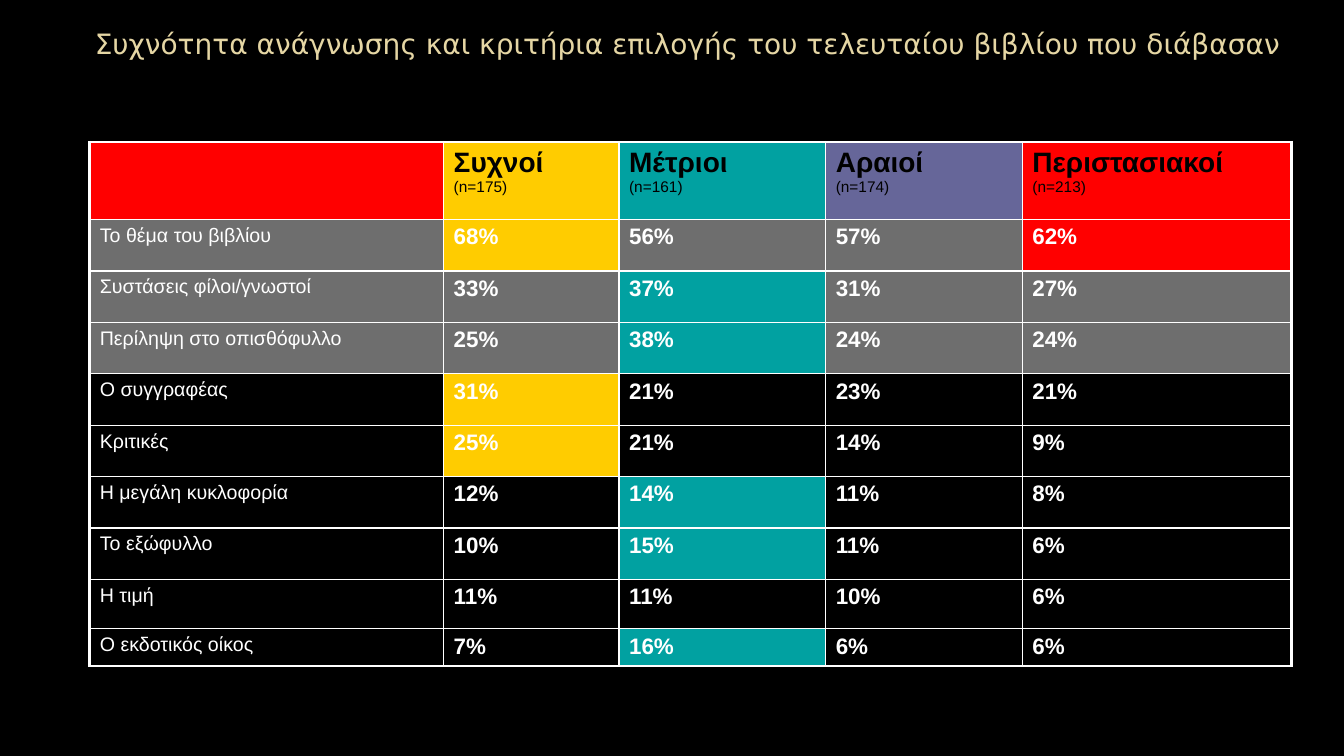
from pptx import Presentation
from pptx import util as u
from pptx.dml.color import RGBColor
from pptx.enum import text
from pptx.oxml import parse_xml
from pptx.oxml.ns import nsdecls
from lxml import etree

COLORS = {
    "black": "000000", "white": "FFFFFF", "cream": "E5D6A4", "red": "FF0000",
    "yellow": "FFCC00", "teal": "01A1A1", "violet": "666699", "grey": "DDDDDD",
}
READERS = [
    ("Συχνοί", "(n=175)", "yellow"),
    ("Μέτριοι", "(n=161)", "teal"),
    ("Αραιοί", "(n=174)", "violet"),
    ("Περιστασιακοί", "(n=213)", "red"),
]
CRITERIA = [
    ("Το θέμα του βιβλίου", (68, 56, 57, 62), (0, 3)),
    ("Συστάσεις φίλοι/γνωστοί", (33, 37, 31, 27), (1,)),
    ("Περίληψη στο οπισθόφυλλο", (25, 38, 24, 24), (1,)),
    ("Ο συγγραφέας", (31, 21, 23, 21), (0,)),
    ("Κριτικές", (25, 21, 14, 9), (0,)),
    ("Η μεγάλη κυκλοφορία", (12, 14, 11, 8), (1,)),
    ("Το εξώφυλλο", (10, 15, 11, 6), (1,)),
    ("Η τιμή", (11, 11, 10, 6), ()),
    ("Ο εκδοτικός οίκος", (7, 16, 6, 6), (1,)),
]
TOP_CRITERIA = 3
COLUMN_WIDTHS = [3.51, 1.74, 2.05, 1.95, 2.67]
ROW_HEIGHTS = [0.77] + [0.51] * 7 + [0.49, 0.37]


class Deck:
    def __init__(self):
        self.prs = Presentation()
        self.prs.slide_width, self.prs.slide_height = u.Inches(13.33), u.Inches(7.5)
        self.slide = self.prs.slides.add_slide(self.prs.slide_layouts[5])
        self.paint(self.slide.background.fill, "black")

    def paint(self, fill, color):
        fill.solid()
        fill.fore_color.rgb = RGBColor.from_string(COLORS[color])

    def style(self, paragraph, size, color, bold=False, face="Arial"):
        font = paragraph.font
        font.size, font.bold, font.name = u.Pt(size), bold, face
        font.color.rgb = RGBColor.from_string(COLORS[color])

    def title(self, wording, left, top, width, height):
        heading = self.slide.shapes.title
        heading.left, heading.top = u.Inches(left), u.Inches(top)
        heading.width, heading.height = u.Inches(width), u.Inches(height)
        frame = heading.text_frame
        frame.text = wording
        frame.word_wrap = True
        frame.auto_size = text.MSO_AUTO_SIZE.SHAPE_TO_FIT_TEXT
        frame.vertical_anchor = text.MSO_ANCHOR.MIDDLE
        paragraph = frame.paragraphs[0]
        paragraph.alignment = text.PP_ALIGN.LEFT
        paragraph.line_spacing = 1.1
        self.style(paragraph, 20, "cream", face="DejaVu Sans")

    def table(self, left, top, widths, heights):
        grid = self.slide.shapes.add_table(
            len(heights), len(widths), u.Inches(left), u.Inches(top),
            u.Inches(sum(widths)), u.Inches(sum(heights))).table
        grid.first_row = grid.horz_banding = False
        for column, width in zip(grid.columns, widths):
            column.width = u.Inches(width)
        for row, height in zip(grid.rows, heights):
            row.height = u.Inches(height)
        for r in range(len(heights)):
            for c in range(len(widths)):
                outer = {"L": c == 0, "R": c == len(widths) - 1,
                         "T": r == 0, "B": r == len(heights) - 1}
                self.borders(grid.cell(r, c), outer)
        return grid

    def borders(self, cell, outer):
        properties = cell._tc.get_or_add_tcPr()
        for side, is_outer in outer.items():
            properties.append(parse_xml(
                f'<a:ln{side} {nsdecls("a")} w="{u.Pt(2.25 if is_outer else 1)}">'
                f'<a:solidFill><a:srgbClr val="{COLORS["white"]}"/></a:solidFill>'
                f'</a:ln{side}>'))

    def cell(self, cell, lines, fill=None, alpha=None):
        if fill:
            self.paint(cell.fill, fill)
        else:
            cell.fill.background()
        if alpha:
            tint = cell._tc.tcPr.find("a:solidFill/a:srgbClr", cell._tc.nsmap)
            etree.SubElement(tint, f"{{{tint.nsmap['a']}}}alpha", val=str(alpha * 1000))
        cell.text = "\n".join(wording for wording, *_ in lines)
        for paragraph, (_, size, color, bold) in zip(cell.text_frame.paragraphs, lines):
            self.style(paragraph, size, color, bold)


def main():
    deck = Deck()
    deck.title("Συχνότητα ανάγνωσης και κριτήρια επιλογής του τελευταίου βιβλίου που διάβασαν",
               0.84, 0.18, 12.28, 0.47)
    grid = deck.table(0.89, 1.41, COLUMN_WIDTHS, ROW_HEIGHTS)
    deck.cell(grid.cell(0, 0), [], "red")
    for c, (group, sample, color) in enumerate(READERS, 1):
        deck.cell(grid.cell(0, c),
                  [(group, 20, "black", True), (sample, 11, "black", False)], color)
    for r, (criterion, shares, highlights) in enumerate(CRITERIA, 1):
        base = ("grey", 50) if r <= TOP_CRITERIA else ()
        deck.cell(grid.cell(r, 0), [(criterion, 14, "white", False)], *base)
        for c, share in enumerate(shares):
            shade = (READERS[c][2],) if c in highlights else base
            deck.cell(grid.cell(r, c + 1), [(f"{share}%", 16, "white", True)], *shade)
    deck.prs.save("out.pptx")


if __name__ == "__main__":
    main()
